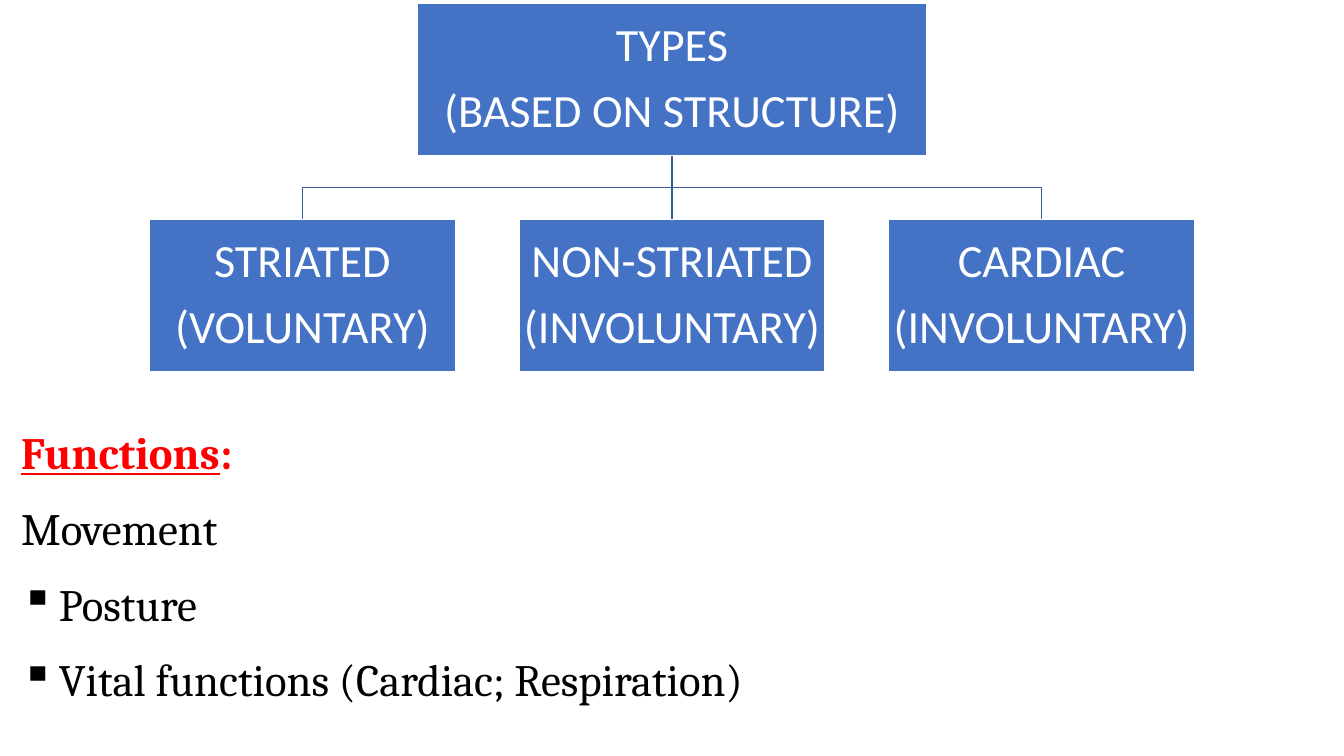
"""Build a slide on the structural types of muscle and their functions."""
from lxml import etree
from pptx import Presentation, util as u
from pptx.dml.color import RGBColor
from pptx.enum import shapes, text
from pptx.oxml.ns import qn

ROOT = ["TYPES", "(BASED ON STRUCTURE)"]
TYPES = [
    ["STRIATED", "(VOLUNTARY)"],
    ["NON-STRIATED", "(INVOLUNTARY)"],
    ["CARDIAC", "(INVOLUNTARY)"],
]
HEADING = ("Functions", ":")
FUNCTIONS = [
    ("Movement", False),
    ("Posture", True),
    ("Vital functions (Cardiac; Respiration)", True),
]

THEME = {
    "box": RGBColor(0x44, 0x72, 0xC4),
    "link": RGBColor(0x36, 0x5B, 0x9D),
    "white": RGBColor(0xFF, 0xFF, 0xFF),
    "line": u.Pt(1),
    "label": {"name": "Calibri", "size": u.Pt(33)},
    "body": {"name": "Cambria", "size": u.Pt(32)},
    "heading": RGBColor(0xFF, 0, 0),
    "ink": RGBColor(0, 0, 0),
}

PAGE_W, PAGE_H = 960, 540
CENTRE = PAGE_W / 2
ROOT_TOP, ROOT_W, BOX_H = 2.2, 363.6, 108.8
CHILD_TOP, CHILD_W, PITCH = 157, 218.4, 264
ROOT_BOTTOM = ROOT_TOP + BOX_H
BEND = (ROOT_BOTTOM + CHILD_TOP) / 2


def apply(target, values):
    for name, value in values.items():
        setattr(target, name, value)


def add_box(page, lines, centre, top, width):
    box = page.shapes.add_shape(
        shapes.MSO_SHAPE.RECTANGLE,
        u.Pt(centre - width / 2), u.Pt(top), u.Pt(width), u.Pt(BOX_H))
    box.shadow.inherit = False
    box.fill.solid()
    box.fill.fore_color.rgb = THEME["box"]
    box.line.color.rgb = THEME["white"]
    box.line.width = THEME["line"]
    frame = box.text_frame
    margins = dict.fromkeys(
        ("margin_left", "margin_top", "margin_right", "margin_bottom"), u.Pt(1.5))
    apply(frame, {"word_wrap": True, "vertical_anchor": text.MSO_ANCHOR.MIDDLE, **margins})
    for index, line in enumerate(lines):
        para = frame.add_paragraph() if index else frame.paragraphs[0]
        apply(para, {"alignment": text.PP_ALIGN.CENTER, "line_spacing": 0.9,
                     "space_after": u.Pt(11.55)})
        span = para.add_run()
        span.text = line
        apply(span.font, THEME["label"])
        span.font.color.rgb = THEME["white"]
    return box


def add_link(page, centre):
    if centre == CENTRE:
        link = page.shapes.add_connector(
            shapes.MSO_CONNECTOR.STRAIGHT,
            u.Pt(CENTRE), u.Pt(ROOT_BOTTOM), u.Pt(CENTRE), u.Pt(CHILD_TOP))
        etree.SubElement(link._element.spPr, qn("a:effectLst"))
    else:
        outline = page.shapes.build_freeform(u.Pt(CENTRE), u.Pt(ROOT_BOTTOM))
        corners = [(CENTRE, BEND), (centre, BEND), (centre, CHILD_TOP)]
        outline.add_line_segments([(u.Pt(x), u.Pt(y)) for x, y in corners], close=False)
        link = outline.convert_to_shape()
        link.shadow.inherit = False
        link.fill.background()
    link.line.color.rgb = THEME["link"]
    link.line.width = THEME["line"]
    return link


def add_bullet(para):
    props = para._p.get_or_add_pPr()
    props.set("marL", str(u.Pt(27)))
    props.set("indent", str(u.Pt(-27)))
    etree.SubElement(props, qn("a:buChar")).set("char", "▪")


def add_functions(page):
    box = page.shapes.add_textbox(u.Pt(8), u.Pt(294), u.Pt(952), u.Pt(213))
    frame = box.text_frame
    frame.word_wrap = True
    rows = [(HEADING, False)] + [((words,), bullet) for words, bullet in FUNCTIONS]
    for index, (parts, bullet) in enumerate(rows):
        para = frame.add_paragraph() if index else frame.paragraphs[0]
        if bullet:
            add_bullet(para)
        apply(para, {"line_spacing": 1.15, "space_after": u.Pt(10)})
        heading = index == 0
        for part in parts:
            span = para.add_run()
            span.text = part
            apply(span.font, {**THEME["body"], "bold": heading,
                              "underline": part == HEADING[0]})
            span.font.color.rgb = THEME["heading" if heading else "ink"]


def main():
    deck = Presentation()
    deck.slide_width, deck.slide_height = u.Pt(PAGE_W), u.Pt(PAGE_H)
    page = deck.slides.add_slide(deck.slide_layouts[6])
    middle = (len(TYPES) - 1) / 2
    centres = [CENTRE + (column - middle) * PITCH for column in range(len(TYPES))]
    links = [add_link(page, centre) for centre in centres]
    root = add_box(page, ROOT, CENTRE, ROOT_TOP, ROOT_W)
    for lines, centre, link in zip(TYPES, centres, links):
        child = add_box(page, lines, centre, CHILD_TOP, CHILD_W)
        if centre == CENTRE:
            link.begin_connect(root, 2)
            link.end_connect(child, 0)
    add_functions(page)
    deck.save("out.pptx")


if __name__ == "__main__":
    main()
